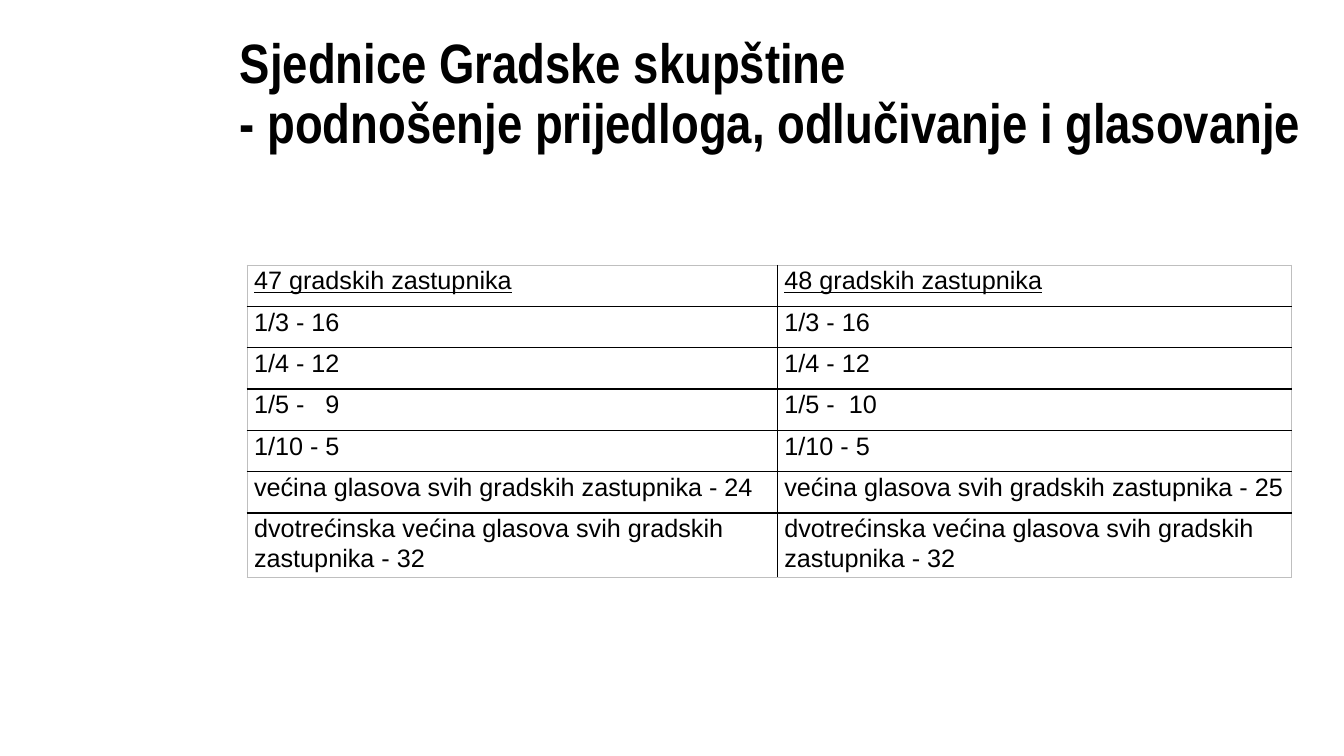
import dataclasses

import lxml.etree
import pptx
import pptx.dml.color
import pptx.enum.text
import pptx.oxml.ns
import pptx.util

Inches = pptx.util.Inches
Pt = pptx.util.Pt


@dataclasses.dataclass(frozen=True)
class TextStyle:
    font: str
    size: float
    spacing: float
    bold: bool = False
    underline: bool = False


@dataclasses.dataclass(frozen=True)
class Border:
    color: str
    width: float


TITLE = TextStyle("Arial Narrow", 39.6, 0.9, bold=True)
HEADING = TextStyle("Arial", 18, 1.07, underline=True)
BODY = TextStyle("Arial", 18, 1.07)
INNER = Border("000000", 1)
OUTER = Border("BFBFBF", 0.5)

MAJORITIES = [
    ("47 gradskih zastupnika", "48 gradskih zastupnika"),
    ("1/3 - 16", "1/3 - 16"),
    ("1/4 - 12", "1/4 - 12"),
    ("1/5 -   9", "1/5 -  10"),
    ("1/10 - 5", "1/10 - 5"),
    ("većina glasova svih gradskih zastupnika - 24",
     "većina glasova svih gradskih zastupnika - 25"),
    ("dvotrećinska većina glasova svih gradskih zastupnika - 32",) * 2,
]
COLUMN_WIDTHS = (5.26, 5.1)
ROW_HEIGHT = 0.41


def rgb(color: str) -> pptx.dml.color.RGBColor:
    return pptx.dml.color.RGBColor.from_string(color)


def write(frame, text: str, style: TextStyle) -> None:
    frame.text = text
    for paragraph in frame.paragraphs:
        paragraph.line_spacing = style.spacing
        for run in paragraph.runs:
            run.font.name = style.font
            run.font.size = Pt(style.size)
            run.font.bold = style.bold
            run.font.underline = style.underline
            run.font.color.rgb = rgb("000000")


def set_borders(cell, borders: dict[str, Border]) -> None:
    """Add the side lines ahead of the fill, in the order given."""
    properties = cell._tc.get_or_add_tcPr()
    qn = pptx.oxml.ns.qn
    for position, (side, border) in enumerate(borders.items()):
        line = lxml.etree.Element(qn(f"a:ln{side}"), w=str(Pt(border.width)))
        fill = lxml.etree.SubElement(line, qn("a:solidFill"))
        lxml.etree.SubElement(fill, qn("a:srgbClr"), val=border.color)
        properties.insert(position, line)


def add_title(slide) -> None:
    title = slide.shapes.add_textbox(Inches(2.28), Inches(0.22), Inches(11.05), Inches(1.45))
    frame = title.text_frame
    frame.word_wrap = True
    frame.vertical_anchor = pptx.enum.text.MSO_ANCHOR.MIDDLE
    write(frame, "Sjednice Gradske skupštine\v- podnošenje prijedloga, odlučivanje i glasovanje", TITLE)


def add_majorities(slide) -> None:
    row_count, column_count = len(MAJORITIES), len(COLUMN_WIDTHS)
    table = slide.shapes.add_table(
        row_count, column_count, Inches(2.45), Inches(2.63),
        Inches(sum(COLUMN_WIDTHS)), Inches(ROW_HEIGHT * row_count)).table
    table.first_row = table.horz_banding = False
    for column, width in zip(table.columns, COLUMN_WIDTHS):
        column.width = Inches(width)

    for r, texts in enumerate(MAJORITIES):
        table.rows[r].height = Inches(ROW_HEIGHT)
        for c, text in enumerate(texts):
            cell = table.cell(r, c)
            cell.margin_left = cell.margin_right = Inches(0.07)
            cell.margin_top = cell.margin_bottom = Inches(0)
            cell.fill.background()
            write(cell.text_frame, text, HEADING if r == 0 else BODY)
            set_borders(cell, {
                "L": OUTER if c == 0 else INNER,
                "R": OUTER if c == column_count - 1 else INNER,
                "T": OUTER if r == 0 else INNER,
                "B": OUTER if r == row_count - 1 else INNER,
            })


def main() -> None:
    presentation = pptx.Presentation()
    presentation.slide_width = Inches(13.33)
    presentation.slide_height = Inches(7.5)
    slide = presentation.slides.add_slide(presentation.slide_layouts[6])
    add_title(slide)
    add_majorities(slide)
    presentation.save("out.pptx")


if __name__ == "__main__":
    main()
